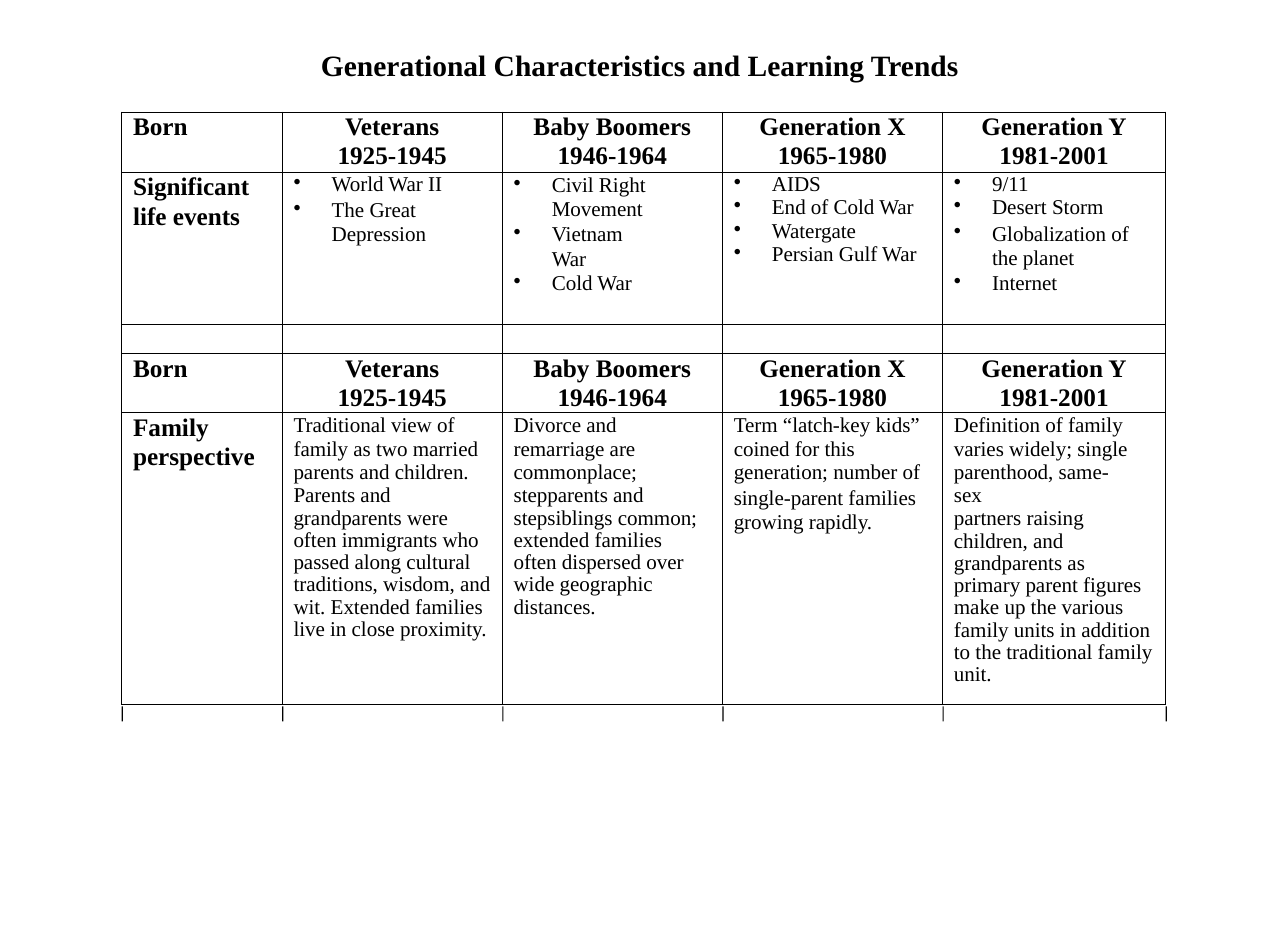
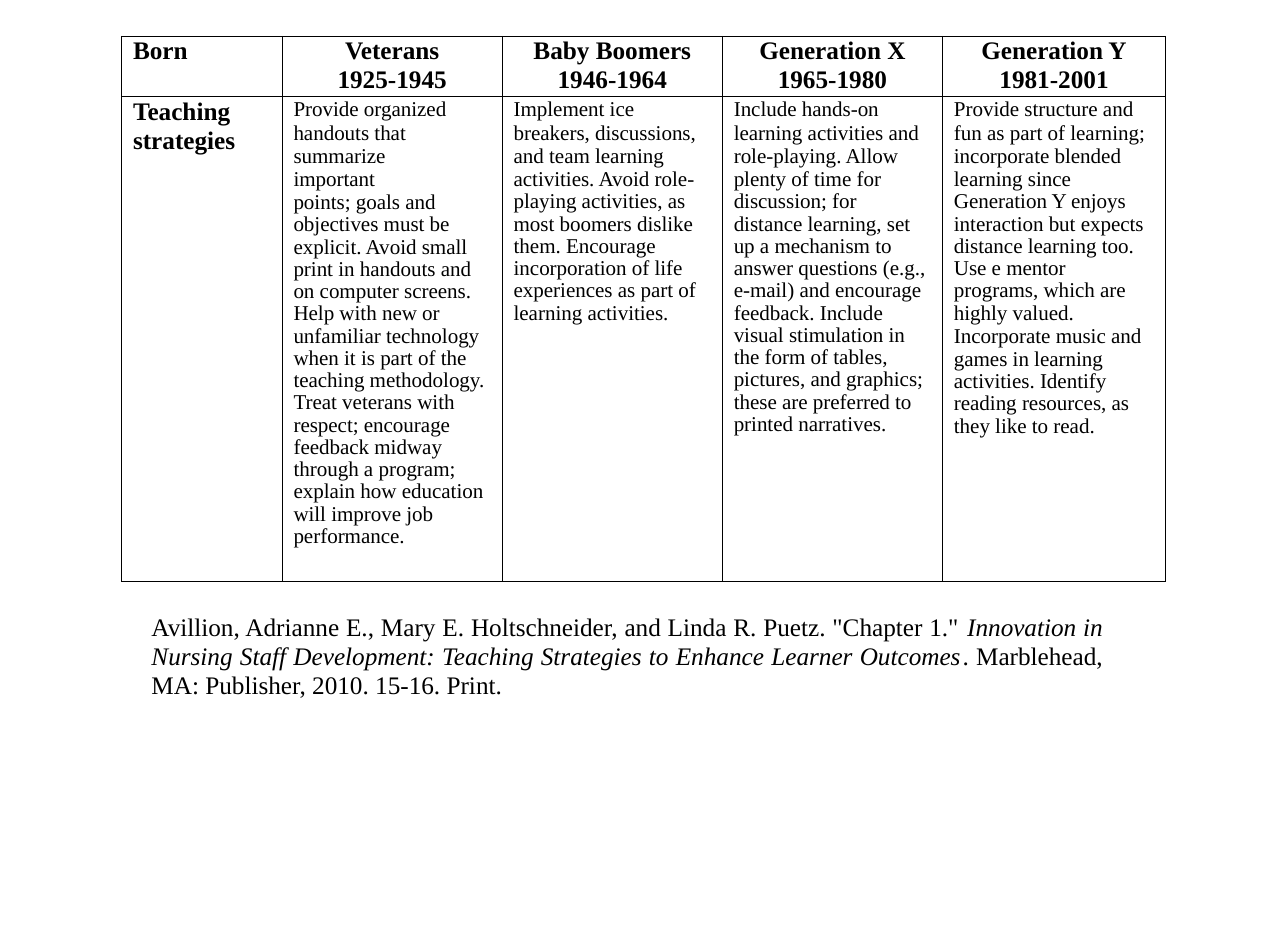
from itertools import accumulate

from lxml.etree import SubElement
from pptx import Presentation
from pptx.dml.color import RGBColor
from pptx.enum.shapes import MSO_SHAPE
from pptx.enum.text import MSO_ANCHOR, MSO_AUTO_SIZE, PP_ALIGN
from pptx.oxml.ns import qn
from pptx.util import Cm, Pt

LEFT, CENTER, JUSTIFY = PP_ALIGN.LEFT, PP_ALIGN.CENTER, PP_ALIGN.JUSTIFY
TOP = MSO_ANCHOR.TOP
FIXED = MSO_AUTO_SIZE.NONE
RECTANGLE = MSO_SHAPE.RECTANGLE

COLORS = {"ink": "000000"}
INK = RGBColor.from_string(COLORS["ink"])
FONT = "Times New Roman"
TABLE_LEFT = 2.04
COLUMN_WIDTHS = [2.69, 3.69, 3.69, 3.69, 3.74]
PROSE_SPACING = [(Pt(11.5), 0.2), (Pt(10.9), 0), (0.96, 0.3), (Pt(11.2), 0), (0.96, 0.2)]
BULLET_SPACING = [(None, 0.2)] * 4

GENERATIONS = ["Born", "Veterans\v1925-1945", "Baby Boomers\v1946-1964",
               "Generation X\v1965-1980", "Generation Y\v1981-2001"]
LIFE_EVENTS = ["Significant life events",
    ["World War II", ("The Great Depression", Pt(11.5), 1)],
    [("Civil Right Movement", Pt(11.5), 1), ("Vietnam\vWar", Pt(11.9), 0), "Cold War"],
    ["AIDS", "End of Cold War", "Watergate", "Persian Gulf War"],
    ["9/11", "Desert Storm", ("Globalization of\vthe planet", Pt(11.5), 1),
     ("Internet", Pt(11.9), 0)]]
FAMILY = ["Family perspective",
    ["Traditional view of family as two married",
     "parents and children.",
     "Parents and\vgrandparents were\voften immigrants who passed along cultural "
     "traditions, wisdom, and wit. Extended families live in close proximity."],
    ["Divorce and\vremarriage are",
     "commonplace;",
     "stepparents and stepsiblings common; extended families\voften dispersed over "
     "wide geographic distances."],
    ["Term “latch-key kids” coined for this",
     "generation; number of",
     ("single-parent families growing rapidly.", Pt(11.5), 0.6)],
    ["Definition of family\vvaries widely; single",
     "parenthood, same-\vsex",
     "partners raising\vchildren, and grandparents as\vprimary parent figures make up "
     "the various family units in addition to the traditional family unit."]]
TEACHING = ["Teaching strategies",
    ["Provide organized handouts that",
     "summarize\vimportant",
     "points; goals and objectives must be explicit. Avoid small print in handouts and\v"
     "on computer screens. Help with new or unfamiliar technology when it is part of the "
     "teaching methodology. Treat veterans with respect; encourage feedback midway\v"
     "through a program; explain how education will improve job performance."],
    ["Implement ice\vbreakers, discussions,",
     "and team learning",
     "activities. Avoid role- playing activities, as most boomers dislike them. Encourage "
     "incorporation of life experiences as part of learning activities."],
    ["Include hands-on\vlearning activities and",
     "role-playing. Allow",
     "plenty of time for discussion; for\vdistance learning, set\vup a mechanism to answer "
     "questions (e.g., e-mail) and encourage feedback. Include\vvisual stimulation in\v"
     "the form of tables, pictures, and graphics; these are preferred to printed narratives."],
    ["Provide structure and\vfun as part of learning;",
     "incorporate blended",
     "learning since Generation Y enjoys interaction but expects distance learning too. "
     "Use e mentor\vprograms, which are highly valued.",
     "Incorporate music and",
     "games in learning activities. Identify reading resources, as they like to read."]]


def write(paragraph, text, size=10, bold=False, italic=False, align=LEFT,
          leading=None, before=0, bullet=False):
    paragraph.alignment = align
    paragraph.line_spacing = leading
    paragraph.space_before = Pt(before)
    for index, line in enumerate(text.split("\v")):
        if index:
            paragraph.add_line_break()
        run = paragraph.add_run()
        run.text = line
        run.font.name = FONT
        run.font.size = Pt(size)
        run.font.bold = bold
        run.font.italic = italic
        run.font.color.rgb = INK
    for line_break in paragraph._p.findall(qn("a:br")):
        SubElement(line_break, qn("a:rPr"), sz=str(size * 100))
    if bullet:
        properties = paragraph._p.get_or_add_pPr()
        properties.set("marL", str(Cm(0.64)))
        properties.set("indent", str(-Cm(0.64)))
        SubElement(properties, qn("a:buChar"), char="•")


def add_grid(slide, top, heights, rows):
    grid = slide.shapes.add_table(len(rows), len(COLUMN_WIDTHS), Cm(TABLE_LEFT), Cm(top),
                                  Cm(sum(COLUMN_WIDTHS)), Cm(sum(heights))).table
    grid.first_row = grid.horz_banding = False
    for column, width in zip(grid.columns, COLUMN_WIDTHS):
        column.width = Cm(width)
    for row, height, contents in zip(grid.rows, heights, rows):
        row.height = Cm(height)
        for index, (cell, content) in enumerate(zip(row.cells, contents)):
            header = contents is GENERATIONS
            centered = header and index > 0
            cell.margin_left = Cm(0 if centered else 0.19)
            cell.margin_right = Cm(0 if centered else 0.12)
            cell.margin_top = cell.margin_bottom = 0
            cell.vertical_anchor = TOP
            for side in ("lnL", "lnR", "lnT", "lnB"):
                border = SubElement(cell._tc.get_or_add_tcPr(), qn("a:" + side), w=str(Pt(0.5)))
                SubElement(SubElement(border, qn("a:solidFill")), qn("a:srgbClr"),
                           val=COLORS["ink"])
            cell.fill.background()
            frame = cell.text_frame
            first = frame.paragraphs[0]
            if not content:
                SubElement(first._p, qn("a:endParaRPr"), sz="1000")
            elif isinstance(content, str):
                write(first, content, size=12, bold=True, leading=Pt(13.8),
                      align=CENTER if centered else LEFT, before=0 if header else 0.4)
            else:
                bullet = contents is LIFE_EVENTS
                spacing = BULLET_SPACING if bullet else PROSE_SPACING
                for number, (entry, default) in enumerate(zip(content, spacing)):
                    paragraph = frame.add_paragraph() if number else first
                    text, leading, before = (entry, *default) if isinstance(entry, str) else entry
                    write(paragraph, text, leading=leading, before=before, bullet=bullet)


deck = Presentation()
deck.slide_width, deck.slide_height = Cm(21.59), Cm(15.62)

trends = deck.slides.add_slide(deck.slide_layouts[5])
heading = trends.shapes.title
heading.left, heading.top, heading.width, heading.height = Cm(5.38), Cm(0.76), Cm(10.9), Cm(0.66)
heading_frame = heading.text_frame
heading_frame.margin_left = heading_frame.margin_right = heading_frame.margin_bottom = 0
heading_frame.margin_top = Cm(0.03)
heading_frame.vertical_anchor = TOP
heading_frame.auto_size = FIXED
write(heading_frame.paragraphs[0], "Generational Characteristics and Learning Trends",
      size=14, bold=True, before=0.9)
add_grid(trends, 1.88, [1.01, 2.54, 0.5, 0.99, 4.88],
         [GENERATIONS, LIFE_EVENTS, [""] * 5, GENERATIONS, FAMILY])
for edge in accumulate(COLUMN_WIDTHS, initial=TABLE_LEFT):
    tick = trends.shapes.add_shape(RECTANGLE, Cm(edge), Cm(11.84), Cm(0.02), Cm(0.25))
    tick.shadow.inherit = False
    tick.fill.solid()
    tick.fill.fore_color.rgb = INK
    tick.line.fill.background()

strategies = deck.slides.add_slide(deck.slide_layouts[6])
add_grid(strategies, 0.61, [1.01, 8.13], [GENERATIONS, TEACHING])
citation = strategies.shapes.add_textbox(Cm(2.51), Cm(10.19), Cm(15.98), Cm(1.55)).text_frame
citation.word_wrap = True
citation.margin_left = Cm(0.03)
citation.margin_right = citation.margin_bottom = 0
citation.margin_top = Cm(0.08)
for part, italic in [
        ('Avillion, Adrianne E., Mary E. Holtschneider, and Linda R. Puetz. "Chapter 1." ', False),
        ("Innovation in Nursing Staff Development: Teaching Strategies to Enhance "
         "Learner Outcomes", True),
        (". Marblehead, MA: Publisher, 2010. 15-16. Print.", False)]:
    write(citation.paragraphs[0], part, size=12, italic=italic, align=JUSTIFY,
          leading=Pt(13.8), before=1.9)

deck.save("out.pptx")
